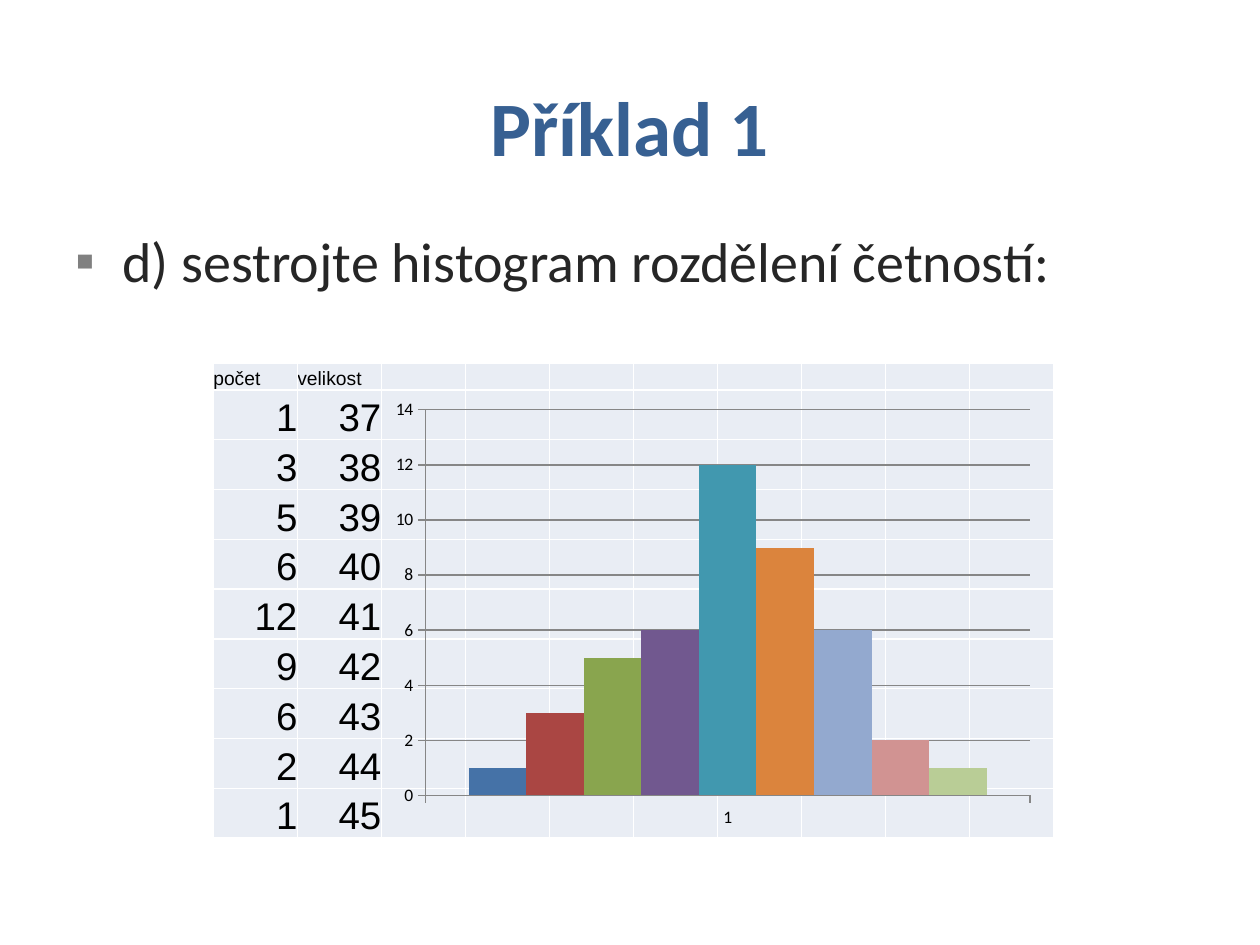
import pptx
import pptx.chart.data
import pptx.dml.color
import pptx.enum.chart
import pptx.enum.text
import pptx.oxml
import pptx.oxml.ns
import pptx.util
from lxml import etree
from pptx.util import Cm, Pt

qn = pptx.oxml.ns.qn
ALIGN = pptx.enum.text.PP_ALIGN
ANCHOR = pptx.enum.text.MSO_ANCHOR

COUNTS = [1, 3, 5, 6, 12, 9, 6, 2, 1]
SIZES = range(37, 46)
BAR_COLORS = ["4572A7", "AA4643", "89A54E", "71588F", "4198AF",
              "DB843D", "93A9CF", "D19392", "B9CD96"]
AXIS_COLOR = "868686"


def rgb(color):
    return pptx.dml.color.RGBColor.from_string(color)


def style_font(font, name, size, color, bold=False):
    font.name, font.size, font.bold = name, Pt(size), bold
    font.color.rgb = rgb(color)


def add_text(slide, box, text, size, color, bold=False):
    tf = slide.shapes.add_textbox(*box).text_frame
    tf.word_wrap = True
    tf.text = text
    p = tf.paragraphs[0]
    style_font(p.runs[0].font, "Calibri", size, color, bold)
    return tf, p


def add_title(slide, box):
    tf, p = add_text(slide, box, "Příklad 1", 44, "376092", True)
    tf.vertical_anchor = ANCHOR.MIDDLE
    p.alignment = ALIGN.CENTER


def add_task(slide, box):
    tf, p = add_text(slide, box, "d) sestrojte histogram rozdělení četností:",
                     32, "262626")
    pPr = p._p.get_or_add_pPr()
    pPr.set("marL", str(Cm(0.95)))
    pPr.set("indent", str(Cm(-0.95)))
    color = etree.SubElement(pPr, qn("a:buClr"))
    etree.SubElement(color, qn("a:srgbClr"), val="808080")
    etree.SubElement(pPr, qn("a:buFont"), typeface="Arial")
    etree.SubElement(pPr, qn("a:buChar"), char="▪")


def add_borders(cell, color, width):
    """Put the four side lines ahead of the fill, as the schema asks."""
    tcPr = cell._tc.get_or_add_tcPr()
    for i, side in enumerate(("lnL", "lnR", "lnT", "lnB")):
        ln = etree.Element(qn("a:" + side), w=str(Pt(width)))
        fill = etree.SubElement(ln, qn("a:solidFill"))
        etree.SubElement(fill, qn("a:srgbClr"), val=color)
        tcPr.insert(i, ln)


def fill_cell(cell, text, size, align):
    cell.margin_left = cell.margin_right = 0
    cell.margin_top = cell.margin_bottom = 0
    cell.vertical_anchor = ANCHOR.BOTTOM
    cell.fill.solid()
    cell.fill.fore_color.rgb = rgb("E9EDF4")
    add_borders(cell, "FFFFFF", 1)
    p = cell.text_frame.paragraphs[0]
    if text:
        p.text = text
        p.alignment = align
        style_font(p.runs[0].font, "Arial", size, "000000")
    else:
        # Keeps an empty cell from stretching its row
        etree.SubElement(p._p, qn("a:endParaRPr"), sz=str(Pt(size).centipoints))


def add_frequency_table(slide, box, columns=10, header_height=Cm(0.53)):
    left, top, width, height = box
    rows = [("počet", "velikost")]
    rows += [(str(n), str(s)) for n, s in zip(COUNTS, SIZES)]
    table = slide.shapes.add_table(len(rows), columns, *box).table
    table.first_row = table.horz_banding = False
    for column in table.columns:
        column.width = width // columns
    for i, values in enumerate(rows):
        header = i == 0
        table.rows[i].height = (header_height if header else
                                (height - header_height) // len(COUNTS))
        for j in range(columns):
            fill_cell(table.cell(i, j), values[j] if j < len(values) else "",
                      11 if header else 22,
                      ALIGN.LEFT if header else ALIGN.RIGHT)


def set_plot_layout(chart, x, y, w, h):
    area = chart._chartSpace.chart.plotArea
    for old in area.findall(qn("c:layout")):
        area.remove(old)
    layout = etree.Element(qn("c:layout"))
    manual = etree.SubElement(layout, qn("c:manualLayout"))
    for tag, val in (("layoutTarget", "inner"), ("xMode", "edge"),
                     ("yMode", "edge"), ("x", x), ("y", y), ("w", w), ("h", h)):
        etree.SubElement(manual, qn("c:" + tag), val=str(val))
    area.insert(0, layout)


def add_histogram(slide, box):
    data = pptx.chart.data.CategoryChartData()
    data.categories = ["1"]
    for i, count in enumerate(COUNTS, 1):
        data.add_series(f"Series {i}", [count])
    kind = pptx.enum.chart.XL_CHART_TYPE.COLUMN_CLUSTERED
    chart = slide.shapes.add_chart(kind, *box, data).chart
    chart.has_legend = chart.has_title = False
    style_font(chart.font, "Calibri", 10, "000000")
    plot = chart.plots[0]
    plot.gap_width, plot.overlap = 150, 0
    plot.vary_by_categories = False
    for series, color in zip(plot.series, BAR_COLORS):
        series.format.fill.solid()
        series.format.fill.fore_color.rgb = rgb(color)
    values = chart.value_axis
    values.minimum_scale, values.maximum_scale, values.major_unit = 0, 14, 2
    values.has_major_gridlines = True
    for axis in (values, chart.category_axis):
        axis.major_tick_mark = pptx.enum.chart.XL_TICK_MARK.OUTSIDE
    for part in (values, values.major_gridlines, chart.category_axis):
        part.format.line.color.rgb = rgb(AXIS_COLOR)
        part.format.line.width = Pt(0.75)
    set_plot_layout(chart, 0.05, 0.06, 0.9, 0.86)


def main():
    prs = pptx.Presentation()
    prs.slide_width, prs.slide_height = Cm(25.4), Cm(19.05)
    slide = prs.slides.add_slide(prs.slide_layouts[6])
    add_title(slide, (Cm(1.27), Cm(0.95), Cm(22.86), Cm(3.18)))
    add_task(slide, (Cm(1.27), Cm(4.45), Cm(22.86), Cm(13.28)))
    add_frequency_table(slide, (Cm(4.3), Cm(7.33), Cm(16.94), Cm(9.57)))
    add_histogram(slide, (Cm(7.9), Cm(7.72), Cm(13.54), Cm(9.04)))
    prs.save("out.pptx")


if __name__ == "__main__":
    main()
